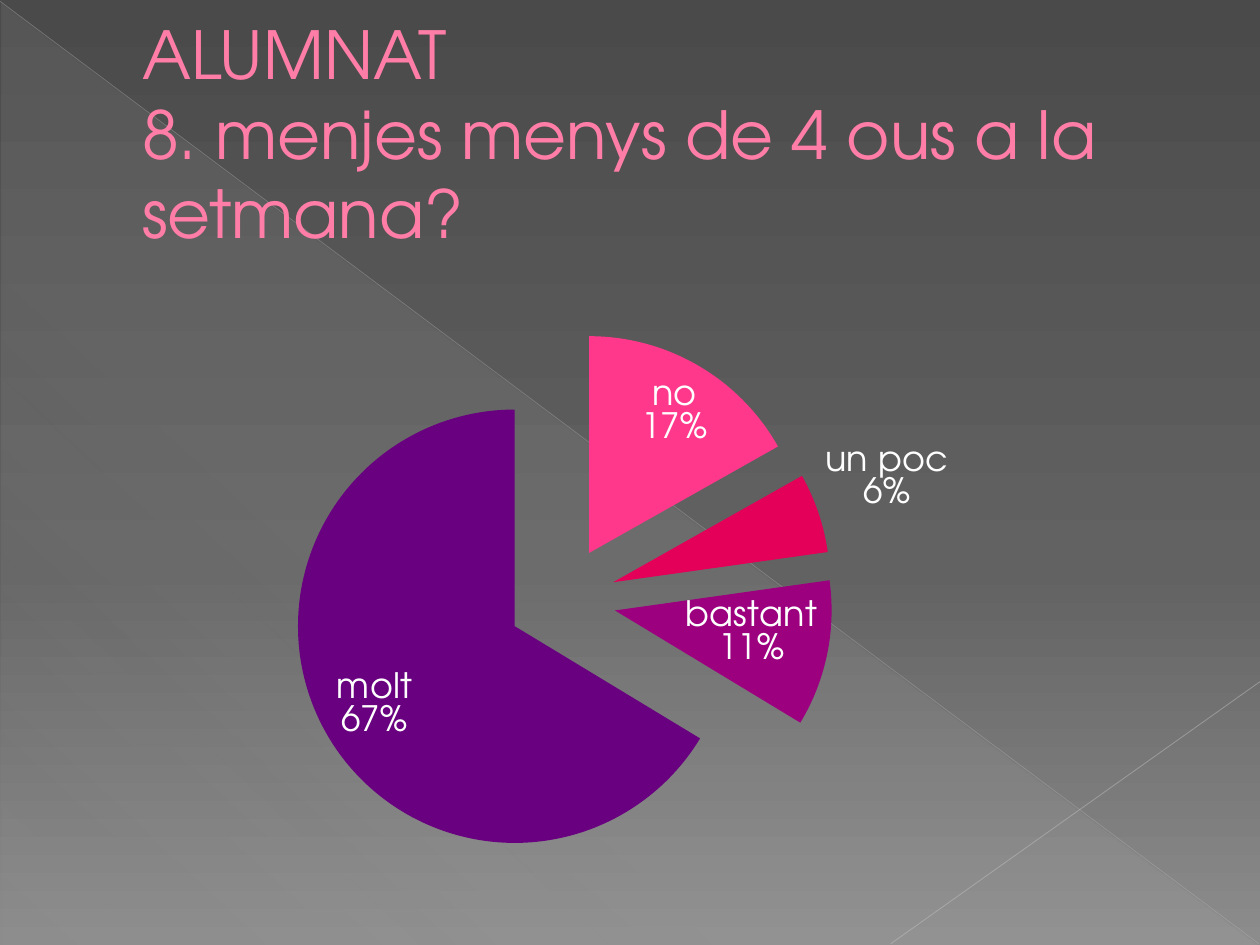
"""Build a slide with an exploded pie chart of pupils' answers about eating eggs."""
import lxml.etree
import pptx
import pptx.chart.data
import pptx.dml.color
import pptx.enum.chart
import pptx.enum.shapes
import pptx.enum.text
import pptx.oxml
import pptx.oxml.ns
import pptx.util

Inches = pptx.util.Inches
Pt = pptx.util.Pt
RGBColor = pptx.dml.color.RGBColor
qn = pptx.oxml.ns.qn

FONT = "TeX Gyre Adventor"
DARK_GREY = RGBColor(0x4A, 0x4A, 0x4A)
MID_GREY = RGBColor(0x62, 0x62, 0x62)
LIGHT_GREY = RGBColor(0x8C, 0x8C, 0x8C)
SHEEN = RGBColor(0xD2, 0xD2, 0xD2)
LONG_RAY = RGBColor(0xBF, 0xBF, 0xBF)
SHORT_RAY = RGBColor(0xC6, 0xC6, 0xC6)
TITLE_PINK = RGBColor(0xFF, 0x7D, 0xA7)
WHITE = RGBColor(0xFF, 0xFF, 0xFF)
SLICE_COLORS = [
    RGBColor(0xFF, 0x38, 0x8C),
    RGBColor(0xE4, 0x00, 0x59),
    RGBColor(0x9C, 0x00, 0x7F),
    RGBColor(0x68, 0x00, 0x7F),
]


def add_child(parent, tag, **attributes):
    child = lxml.etree.SubElement(parent, qn(tag))
    for key, value in attributes.items():
        child.set(key, str(value))
    return child


def set_gradient(fill, owner, stops, angle):
    fill.gradient()
    gradient = owner.find(".//" + qn("a:gradFill"))
    for child in list(gradient):
        gradient.remove(child)
    stop_list = add_child(gradient, "a:gsLst")
    for position, color, opacity in stops:
        stop = add_child(stop_list, "a:gs", pos=position * 1000)
        tint = add_child(stop, "a:srgbClr", val=color)
        add_child(tint, "a:alpha", val=opacity * 1000)
    add_child(gradient, "a:lin", ang=angle * 60000, scaled=0)


presentation = pptx.Presentation()
presentation.slide_width = Inches(10)
presentation.slide_height = Inches(7.5)
slide = presentation.slides.add_slide(presentation.slide_layouts[6])
set_gradient(
    slide.background.fill,
    slide.element,
    [(0, DARK_GREY, 100), (60, MID_GREY, 100), (100, LIGHT_GREY, 100)],
    90,
)

sheen = slide.shapes.add_shape(
    pptx.enum.shapes.MSO_SHAPE.RIGHT_TRIANGLE,
    Inches(0.01), Inches(0.02), Inches(9.98), Inches(7.48),
)
sheen.shadow.inherit = False
sheen.line.fill.background()
set_gradient(
    sheen.fill, sheen.element, [(0, SHEEN, 10), (70, SHEEN, 8), (100, SHEEN, 1)], 133
)

for start_x, start_y, end_x, end_y, color, width, opacity in [
    (0, 0.01, 9.99, 7.49, LONG_RAY, 0.39, 35),
    (10, 5.41, 7.07, 7.49, SHORT_RAY, 0.47, 45),
]:
    ray = slide.shapes.add_connector(
        pptx.enum.shapes.MSO_CONNECTOR.STRAIGHT,
        Inches(start_x), Inches(start_y), Inches(end_x), Inches(end_y),
    )
    ray.line.color.rgb = color
    ray.line.width = Pt(width)
    add_child(ray.element.find(".//" + qn("a:srgbClr")), "a:alpha", val=opacity * 1000)
    add_child(ray.element.spPr, "a:effectLst")

title = slide.shapes.add_textbox(Inches(0.5), Inches(0.29), Inches(9), Inches(1.53))
title.text_frame.word_wrap = True
title.text_frame.vertical_anchor = pptx.enum.text.MSO_ANCHOR.MIDDLE
title.text_frame.text = "ALUMNAT\v8. menjes menys de 4 ous a la setmana?"
heading = title.text_frame.paragraphs[0]
heading._p.get_or_add_pPr().set("marL", str(Inches(0.53)))
for run in heading.runs:
    run.font.name = FONT
    run.font.size = Pt(37.8)
    run.font.color.rgb = TITLE_PINK

answers = pptx.chart.data.CategoryChartData()
answers.categories = ["no", "un poc", "bastant", "molt"]
answers.add_series("Series 1", [17, 6, 11, 67])
pie = slide.shapes.add_chart(
    pptx.enum.chart.XL_CHART_TYPE.PIE_EXPLODED,
    Inches(0.5), Inches(2.06), Inches(9), Inches(5), answers,
).chart
pie.has_legend = False
pie.has_title = False
pie.font.name = FONT
pie.font.size = Pt(10)
pie.font.color.rgb = WHITE

plot = pie.plots[0]
plot.vary_by_categories = True
slices = plot.series[0]
for index, color in enumerate(SLICE_COLORS):
    slice_format = slices.points[index].format
    slice_format.fill.solid()
    slice_format.fill.fore_color.rgb = color
    slice_format.line.fill.background()
for explosion in slices._element.iter(qn("c:explosion")):
    explosion.set("val", "25")

labels = slices.data_labels
labels.show_category_name = True
labels.show_value = True
labels.show_percentage = False
labels.number_format = '0"%"'
labels.number_format_is_linked = False
labels.position = pptx.enum.chart.XL_LABEL_POSITION.BEST_FIT
labels.font.name = FONT
labels.font.size = Pt(20)
labels.font.color.rgb = WHITE
separator = lxml.etree.Element(qn("c:separator"))
separator.text = "\n"
labels._element.find(qn("c:showBubbleSize")).addnext(separator)

plot_area = pie.element.find(".//" + qn("c:plotArea"))
for old_layout in plot_area.findall(qn("c:layout")):
    plot_area.remove(old_layout)
layout = lxml.etree.Element(qn("c:layout"))
plot_area.insert(0, layout)
manual_layout = add_child(layout, "c:manualLayout")
add_child(manual_layout, "c:layoutTarget", val="inner")
add_child(manual_layout, "c:xMode", val="edge")
add_child(manual_layout, "c:yMode", val="edge")
for edge, share in [("x", 0.2), ("y", 0.11), ("w", 0.48), ("h", 0.86)]:
    add_child(manual_layout, "c:" + edge, val=share)

presentation.save("out.pptx")
